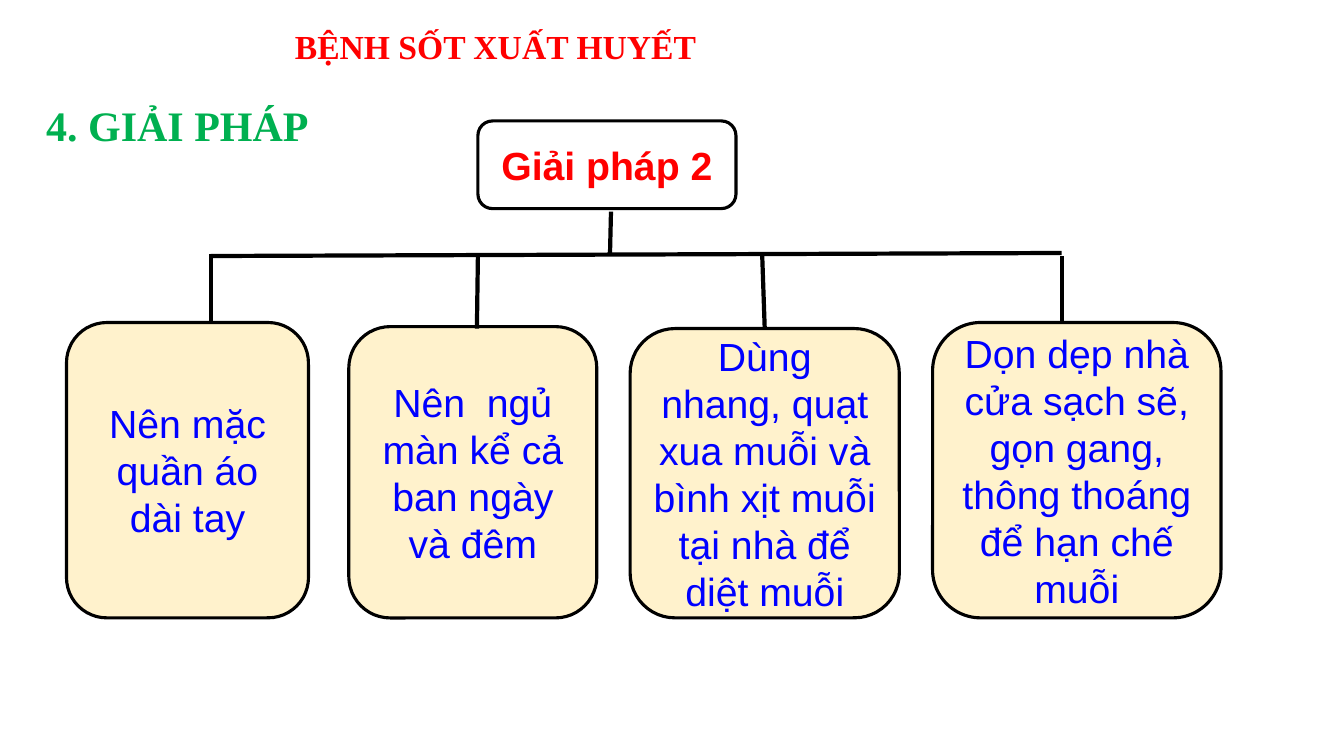
from lxml import etree
from pptx import Presentation
from pptx.dml.color import RGBColor
from pptx.enum.shapes import MSO_CONNECTOR, MSO_SHAPE
from pptx.enum.text import MSO_ANCHOR, MSO_AUTO_SIZE, PP_ALIGN
from pptx.oxml import parse_xml
from pptx.oxml.ns import nsdecls, qn
from pptx.util import Inches, Pt

STRAIGHT = MSO_CONNECTOR.STRAIGHT
ROUNDED = MSO_SHAPE.ROUNDED_RECTANGLE
MIDDLE = MSO_ANCHOR.MIDDLE
GROW = MSO_AUTO_SIZE.SHAPE_TO_FIT_TEXT
CENTER, JUSTIFY = PP_ALIGN.CENTER, PP_ALIGN.JUSTIFY
BLACK, RED, GREEN, BLUE = "000000", "FF0000", "00B050", "0000FF"
WHITE, CREAM = "FFFFFF", "FFF2CC"


def color(hex_code):
    return RGBColor.from_string(hex_code)


def write(frame, text, align, hex_code, **font_format):
    paragraph = frame.paragraphs[0]
    paragraph.alignment = align
    run = paragraph.add_run()
    run.text = text
    run.font.color.rgb = color(hex_code)
    for attribute, value in font_format.items():
        setattr(run.font, attribute, value)
    return paragraph


prs = Presentation()
prs.slide_width, prs.slide_height = Inches(13.33), Inches(7.5)
slide = prs.slides.add_slide(prs.slide_layouts[6])

nodes = [
    ("Nên mặc quần áo dài tay", 0.66, 3.2, 2.4, 2.93, CREAM, BLUE, False),
    ("Nên  ngủ màn kể cả ban ngày và đêm", 3.46, 3.24, 2.46, 2.89, CREAM, BLUE, False),
    ("Dùng nhang, quạt xua muỗi và bình xịt muỗi tại nhà để diệt muỗi",
     6.25, 3.26, 2.67, 2.87, CREAM, BLUE, False),
    ("Dọn dẹp nhà cửa sạch sẽ, gọn gang, thông thoáng để hạn chế muỗi",
     9.25, 3.2, 2.86, 2.93, CREAM, BLUE, False),
    ("Giải pháp 2", 4.74, 1.2, 2.56, 0.87, WHITE, RED, True),
]
boxes = []
for text, left, top, width, height, fill, text_color, bold in nodes:
    box = slide.shapes.add_shape(
        ROUNDED, Inches(left), Inches(top), Inches(width), Inches(height))
    box.shadow.inherit = False
    box.fill.solid()
    box.fill.fore_color.rgb = color(fill)
    box.line.color.rgb = color(BLACK)
    box.line.width = Pt(2.25)
    box.text_frame.word_wrap = True
    box.text_frame.vertical_anchor = MIDDLE
    write(box.text_frame, text, CENTER, text_color,
          name="Arial", size=Pt(28), bold=bold)
    boxes.append(box)
repellent_box = boxes[2]

branches = [
    (6.06, 2.1, 6.05, 2.52, None),
    (2.09, 2.54, 10.53, 2.51, None),
    (2.09, 2.52, 2.09, 3.2, None),
    (4.74, 2.55, 4.73, 3.26, None),
    (7.56, 2.54, 7.59, 3.26, repellent_box),
    (10.53, 2.54, 10.53, 3.18, None),
]
for x1, y1, x2, y2, joined_box in branches:
    branch = slide.shapes.add_connector(
        STRAIGHT, Inches(x1), Inches(y1), Inches(x2), Inches(y2))
    if joined_box is not None:
        branch.end_connect(joined_box, 0)
    branch.line.color.rgb = color(BLACK)
    branch.line.width = Pt(3)
    etree.SubElement(branch.element.spPr, qn("a:effectLst"))

heading = slide.shapes.add_textbox(
    Inches(0.36), Inches(0.9), Inches(4.09), Inches(0.6)).text_frame
heading.word_wrap = True
heading.auto_size = GROW
heading_line = write(heading, "4. GIẢI PHÁP", JUSTIFY, GREEN,
                     name="Times New Roman", size=Pt(30), bold=True)
heading_line.line_spacing = 1.07
heading_line.space_after = Pt(8)

title = slide.shapes.add_textbox(
    Inches(0.2), Inches(0.21), Inches(9.43), Inches(0.58)).text_frame
title.word_wrap = False
title_line = write(title, "BỆNH SỐT XUẤT HUYẾT", CENTER, RED,
                   name="Times New Roman", size=Pt(24), bold=True)
title_line.runs[0].font._element.insert(0, parse_xml(
    f'<a:ln {nsdecls("a")} w="{Pt(0.75)}"><a:solidFill>'
    f'<a:srgbClr val="{RED}"/></a:solidFill></a:ln>'))

prs.save("out.pptx")
